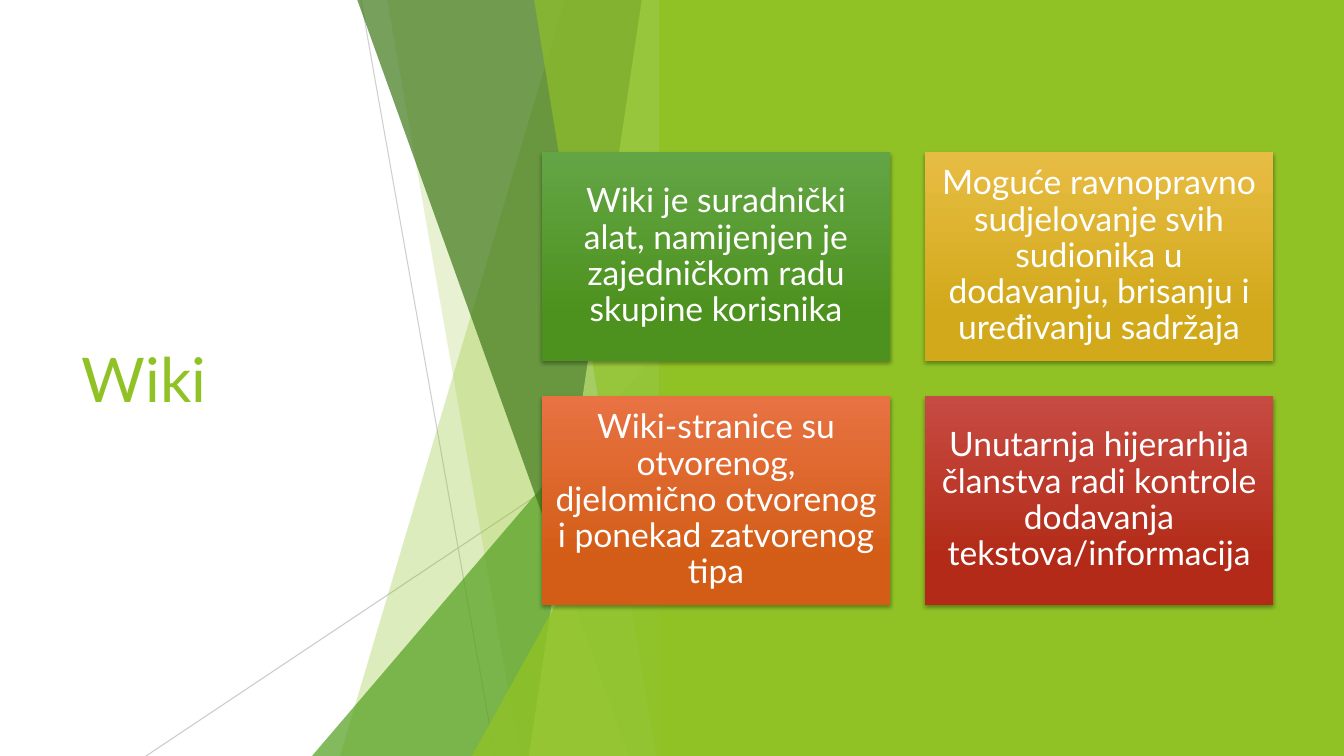
"""Build the Wiki slide: title, translucent facets and a two-by-two grid of cards."""
from lxml import etree
from pptx import Presentation
from pptx import util as u
from pptx.dml.color import RGBColor
from pptx.enum import shapes, text
from pptx.oxml.ns import qn

COLOURS = {
    "lime": "90C226", "green": "54A021", "forest": "3F7819", "pale": "C0E474",
    "grey": "BFBFBF", "white": "FFFFFF", "black": "000000",
}
FONT = "Lato"
WIDTH, HEIGHT = 1344, 756
TITLE = ("Wiki", (72, 152, 391, 452))
RAYS = [((361, 0), (495, 756), 75), ((671, 406), (146, 756), 80)]
FACETS = [
    ("band", 565, 340, "lime", 30),
    ("band", 387, 520, "lime", 20),
    ("wedge", 312, 336, "green", 72),
    ("band", 357, 629, "forest", 70),
    ("band", 642, 529, "pale", 70),
    ("band", 534, 656, "lime", 65),
    ("wedge", 472, 396, "lime", 80),
]
FACET_RIGHT = 671
PANEL = (659, 0, 685, HEIGHT)
CARDS = [
    ("Wiki je suradnički alat, namijenjen je zajedničkom radu skupine korisnika", "63A545", "4D921E"),
    ("Moguće ravnopravno sudjelovanje svih sudionika u dodavanju, brisanju i uređivanju sadržaja", "E7BC43", "D2A91B"),
    ("Wiki-stranice su otvorenog, djelomično otvorenog i ponekad zatvorenog tipa", "E87242", "D35D16"),
    ("Unutarnja hijerarhija članstva radi kontrole dodavanja tekstova/informacija", "C74B42", "B32B18"),
]
CARD_LEFT, CARD_TOP, CARD_WIDTH, CARD_HEIGHT, CARD_GAP = 542, 152, 348, 209, 35
EMU_PER_PX = 914400 / 100.8


def px(*lengths):
    return [u.Emu(round(length * EMU_PER_PX)) for length in lengths]


def rgb(name):
    return RGBColor.from_string(COLOURS.get(name, name))


def set_alpha(fill, percent):
    colour = fill._xPr.find(".//" + qn("a:srgbClr"))
    etree.SubElement(colour, qn("a:alpha"), val=str(percent * 1000))


def paint(shape, colour, alpha=100):
    shape.shadow.inherit = False
    shape.line.fill.background()
    shape.fill.solid()
    shape.fill.fore_color.rgb = rgb(colour)
    if alpha < 100:
        set_alpha(shape.fill, alpha)


def write(box, words, size, colour, align=text.PP_ALIGN.LEFT, spacing=1.0):
    frame = box.text_frame
    frame.word_wrap = True
    frame.vertical_anchor = text.MSO_ANCHOR.MIDDLE
    frame.margin_left = frame.margin_right = u.Inches(0.1)
    frame.margin_top = frame.margin_bottom = u.Inches(0.1)
    para = frame.paragraphs[0]
    para.alignment = align
    para.line_spacing = spacing
    span = para.add_run()
    span.text = words
    span.font.name = FONT
    span.font.size = u.Pt(size)
    span.font.color.rgb = rgb(colour)


def add_ray(page, start, end, alpha):
    ray = page.shapes.add_connector(shapes.MSO_CONNECTOR.STRAIGHT, *px(*start, *end))
    ray.line.width = u.Pt(0.75)
    ray.line.color.rgb = rgb("grey")
    set_alpha(ray.line.fill, alpha)
    etree.SubElement(ray._element.spPr, qn("a:effectLst"))


def add_band(page, top_x, bottom_x):
    corners = [(FACET_RIGHT, -1), (FACET_RIGHT, HEIGHT), (bottom_x, HEIGHT)]
    outline = page.shapes.build_freeform(top_x, -1, scale=EMU_PER_PX)
    outline.add_line_segments(corners, close=True)
    return outline.convert_to_shape()


def add_wedge(page, left, top):
    wedge = page.shapes.add_shape(
        shapes.MSO_SHAPE.ISOSCELES_TRIANGLE, *px(left, top, FACET_RIGHT - left, HEIGHT - top))
    wedge.adjustments[0] = 1
    return wedge


def add_card(page, index, words, light, dark):
    row, column = divmod(index, 2)
    left = CARD_LEFT + column * (CARD_WIDTH + CARD_GAP)
    top = CARD_TOP + row * (CARD_HEIGHT + CARD_GAP)
    card = page.shapes.add_shape(
        shapes.MSO_SHAPE.RECTANGLE, *px(left, top, CARD_WIDTH, CARD_HEIGHT))
    paint(card, dark)
    card.fill.gradient()
    card.fill.gradient_angle = 270
    for stop, colour, position in zip(card.fill.gradient_stops, (light, dark), (0, 0.78)):
        stop.color.rgb = rgb(colour)
        stop.position = position
    effects = card._element.spPr.find(qn("a:effectLst"))
    shadow = etree.SubElement(
        effects, qn("a:outerShdw"), blurRad=str(u.Pt(3)), dist=str(u.Pt(2)),
        dir="5400000", rotWithShape="0")
    tint = etree.SubElement(shadow, qn("a:srgbClr"), val=COLOURS["black"])
    etree.SubElement(tint, qn("a:alpha"), val="35000")
    write(card, words, 24, "white", align=text.PP_ALIGN.CENTER, spacing=0.9)


def main():
    deck = Presentation()
    deck.slide_width, deck.slide_height = px(WIDTH, HEIGHT)
    page = deck.slides.add_slide(deck.slide_layouts[6])
    words, place = TITLE
    write(page.shapes.add_textbox(*px(*place)), words, 44, "lime")
    for ray in RAYS:
        add_ray(page, *ray)
    for kind, first, second, colour, alpha in FACETS:
        add_facet = add_band if kind == "band" else add_wedge
        paint(add_facet(page, first, second), colour, alpha)
    paint(page.shapes.add_shape(shapes.MSO_SHAPE.RECTANGLE, *px(*PANEL)), "lime")
    for index, card in enumerate(CARDS):
        add_card(page, index, *card)
    deck.save("out.pptx")


if __name__ == "__main__":
    main()
